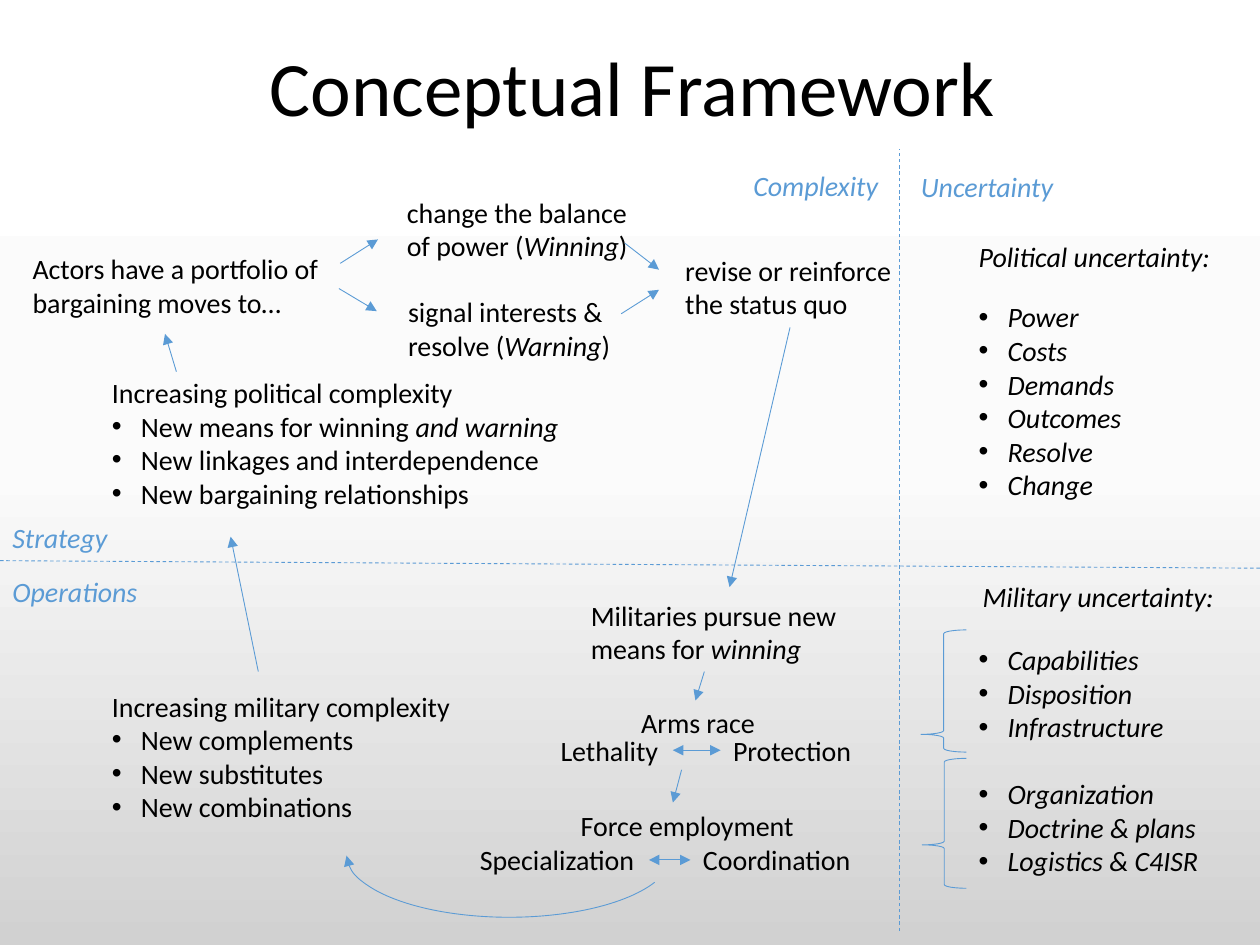
from copy import deepcopy

from pptx import Presentation
from pptx.dml.color import RGBColor
from pptx.enum.dml import MSO_LINE
from pptx.enum.shapes import MSO_CONNECTOR, MSO_SHAPE
from pptx.enum.text import MSO_ANCHOR, MSO_AUTO_SIZE, PP_ALIGN
from pptx.oxml.ns import qn
from pptx.oxml.xmlchemy import OxmlElement
from pptx.util import Pt

BLACK, BLUE = "000000", "5B9BD5"
LINE_WIDTH, INDENT = 0.5, 16.56


def color(hex_value):
    return RGBColor.from_string(hex_value)


def style_line(shape, arrows=(), dashed=False):
    shape.line.color.rgb = color(BLUE)
    shape.line.width = Pt(LINE_WIDTH)
    if dashed:
        shape.line.dash_style = MSO_LINE.DASH
    outline = shape.line._get_or_add_ln()
    for end in arrows:
        arrowhead = OxmlElement(f"a:{end}")
        arrowhead.set("type", "triangle")
        outline.append(arrowhead)


prs = Presentation()
prs.slide_width, prs.slide_height = Pt(720), Pt(540)
slide = prs.slides.add_slide(prs.slide_layouts[5])

backdrop = slide.background.fill
backdrop.gradient()
backdrop.gradient_angle = 270
stop_list = slide.element.find(".//" + qn("a:gsLst"))
stop_list.insert(1, deepcopy(stop_list[0]))
for stop, (position, shade) in zip(
    backdrop.gradient_stops, [(0, "FFFFFF"), (0.5, "FBFBFB"), (1, "D1D1D1")]
):
    stop.position = position
    stop.color.rgb = color(shade)

title = slide.shapes.title
title.left, title.top, title.width, title.height = Pt(67.7), Pt(0), Pt(587.5), Pt(104.4)
title.text_frame.text = "Conceptual Framework"
title.text_frame.vertical_anchor = MSO_ANCHOR.MIDDLE
heading = title.text_frame.paragraphs[0]
heading.alignment = PP_ALIGN.CENTER
heading.line_spacing = 0.9
heading.font.name = "Calibri"
heading.font.size = Pt(44)
heading.font.color.rgb = color(BLACK)

# Asterisks enclose italics, "- " opens a bullet and "+ " a bullet after a gap.
texts = [
    (11.5, 140.4, 180.7, 46, True, BLACK, ["Actors have a portfolio of bargaining moves to…"]),
    (384.5, 141.1, 133.9, 46, True, BLACK, ["revise or reinforce the status quo"]),
    (225.4, 108, 141.8, 46, True, BLACK, ["change the balance of power (*Winning*)"]),
    (226.1, 164.9, 159.1, 46, True, BLACK, ["signal interests & resolve (*Warning*)"]),
    (56.9, 390.2, 219.6, 85, True, BLACK,
     ["Increasing military complexity", "- New complements", "- New substitutes",
      "- New combinations"]),
    (330.5, 338.4, 164.2, 46, True, BLACK, ["Militaries pursue new means for *winning*"]),
    (313.2, 415.4, 71.3, 26.6, False, BLACK, ["Lethality"]),
    (411.8, 415.4, 82.8, 26.6, False, BLACK, ["Protection"]),
    (267.1, 478.1, 103.7, 26.6, False, BLACK, ["Specialization"]),
    (394.6, 478.1, 100.1, 26.6, False, BLACK, ["Coordination"]),
    (0, 293.8, 69.8, 26.6, False, BLUE, ["*Strategy*"]),
    (0, 324.7, 87.1, 26.6, False, BLUE, ["*Operations*"]),
    (56.9, 211, 275, 87.1, True, BLACK,
     ["Increasing political complexity", "- New means for winning *and warning*",
      "- New linkages and interdependence", "- New bargaining relationships"]),
    (552.2, 363.6, 141.8, 143.3, False, BLACK,
     ["- *Capabilities*", "- *Disposition*", "- *Infrastructure*", "+ *Organization*",
      "- *Doctrine & plans*", "- *Logistics & C4ISR*"]),
    (552.2, 167.8, 99.4, 123.8, False, BLACK,
     ["- *Power*", "- *Costs*", "- *Demands*", "- *Outcomes*", "- *Resolve*", "- *Change*"]),
    (552.2, 133.2, 167.8, 26.6, True, BLACK, ["*Political uncertainty:*"]),
    (554.4, 327.6, 165.6, 26.6, True, BLACK, ["*Military uncertainty:*"]),
    (423.4, 92.9, 86.4, 26.6, False, BLUE, ["*Complexity*"]),
    (519.1, 93.6, 90.7, 26.6, False, BLUE, ["*Uncertainty*"]),
    (359.3, 399.6, 80.6, 26.6, False, BLACK, ["Arms race"]),
    (324.7, 458.6, 138.2, 26.6, False, BLACK, ["Force employment"]),
]
boxes = {}
for left, top, width, height, wraps, ink, lines in texts:
    box = slide.shapes.add_textbox(Pt(left), Pt(top), Pt(width), Pt(height))
    boxes[lines[0]] = box
    frame = box.text_frame
    frame.word_wrap = wraps
    frame.auto_size = MSO_AUTO_SIZE.SHAPE_TO_FIT_TEXT
    for index, line in enumerate(lines):
        paragraph = frame.add_paragraph() if index else frame.paragraphs[0]
        if line[:2] in ("- ", "+ "):
            if line[0] == "+":
                paragraph.space_before = Pt(19.2)
            properties = paragraph._p.get_or_add_pPr()
            properties.set("marL", str(Pt(INDENT)))
            properties.set("indent", str(-Pt(INDENT)))
            bullet_font = OxmlElement("a:buFont")
            bullet_font.set("typeface", "Arial")
            bullet = OxmlElement("a:buChar")
            bullet.set("char", "•")
            properties.extend([bullet_font, bullet])
            line = line[2:]
        for part, words in enumerate(line.split("*")):
            if words:
                run = paragraph.add_run()
                run.text = words
                run.font.name = "Calibri"
                run.font.size = Pt(16)
                run.font.italic = part % 2 == 1
                run.font.color.rgb = color(ink)

one_way, two_way = ["tailEnd"], ["headEnd", "tailEnd"]
status_quo = "revise or reinforce the status quo"
links = [
    (193.7, 164.9, 215.3, 177.8, one_way, None, None),
    (194.4, 150.5, 216, 136.8, one_way, None, None),
    (384.5, 428.7, 411.8, 428.7, two_way, ("Lethality", 3), ("Protection", 1)),
    (370.8, 491.4, 394.6, 491.4, two_way, ("Specialization", 3), ("Coordination", 1)),
    (451.4, 187.1, 416.9, 335.5, one_way, (status_quo, 2), None),
    (402.5, 383.8, 397.4, 400.3, one_way, None, None),
    (357.1, 139, 376.6, 154.1, one_way, None, None),
    (355, 179.3, 376.6, 165.6, one_way, None, None),
    (389.5, 439.9, 384.5, 458.6, one_way, None, None),
    (100.8, 212.4, 94.3, 190.8, one_way, None, None),
    (147.6, 383.8, 131.8, 306.7, one_way, None, None),
    (0, 320.4, 720, 324.7, [], None, None),
    (514.1, 532.1, 514.1, 85, [], None, None),
]
for x1, y1, x2, y2, arrows, source, target in links:
    link = slide.shapes.add_connector(MSO_CONNECTOR.STRAIGHT, Pt(x1), Pt(y1), Pt(x2), Pt(y2))
    if source:
        link.begin_connect(boxes[source[0]], source[1])
    if target:
        link.end_connect(boxes[target[0]], target[1])
    style_line(link, arrows, dashed=not arrows)
    link._element.spPr.append(OxmlElement("a:effectLst"))

curves = [
    (MSO_SHAPE.ARC, 198, 452.2, 185.8, 72, (6.536, 107.71), one_way),
    (MSO_SHAPE.LEFT_BRACE, 526.3, 360, 25.9, 69.8, (0.083, 0.855), []),
    (MSO_SHAPE.LEFT_BRACE, 527, 433.4, 25.2, 74.2, (0.083, 0.666), []),
]
for preset, left, top, width, height, adjustments, arrows in curves:
    curve = slide.shapes.add_shape(preset, Pt(left), Pt(top), Pt(width), Pt(height))
    for index, value in enumerate(adjustments):
        curve.adjustments[index] = value
    curve.fill.background()
    curve.shadow.inherit = False
    style_line(curve, arrows)

prs.save("out.pptx")
